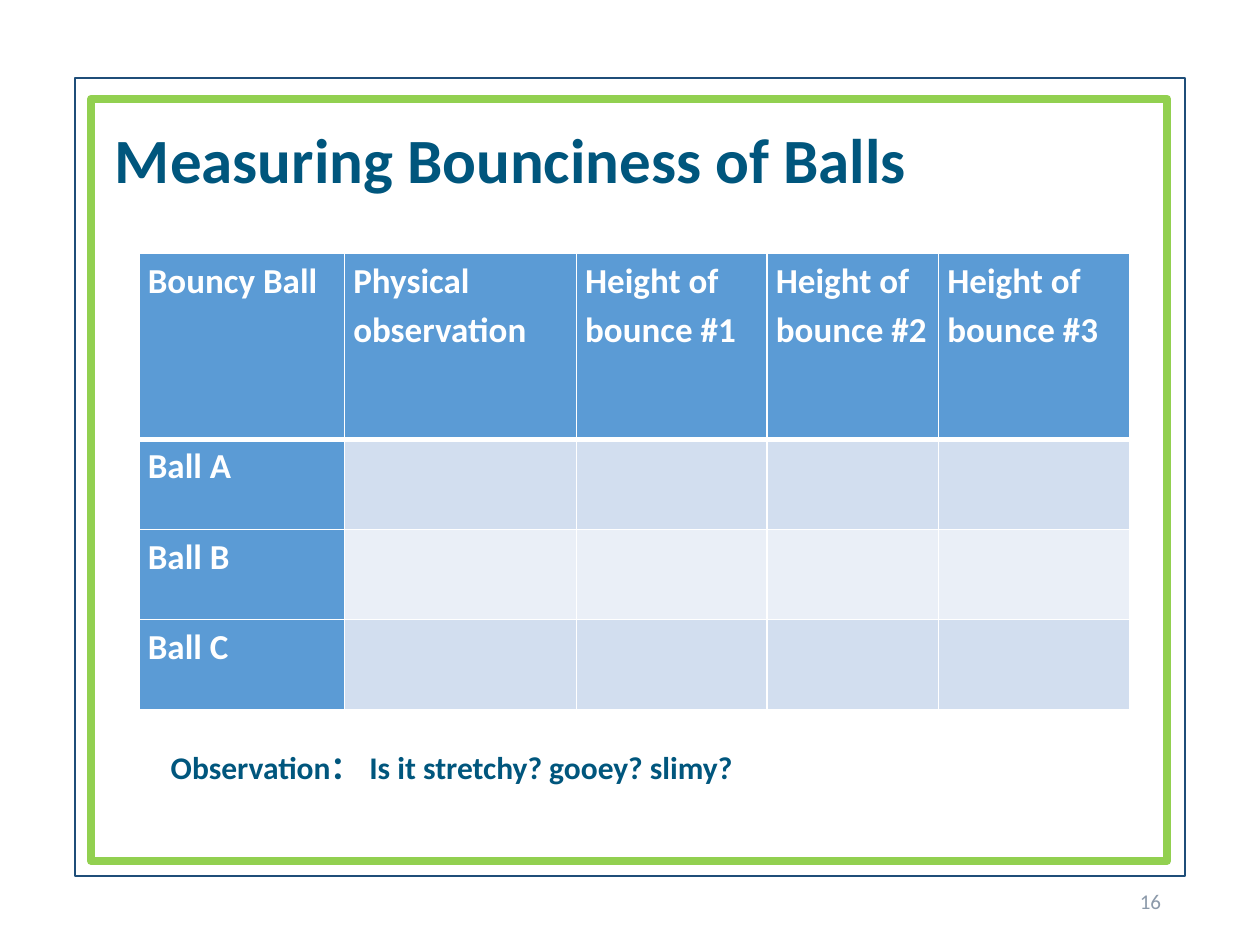
from lxml.etree import SubElement
from pptx import Presentation
from pptx.dml.color import RGBColor
from pptx.enum.shapes import MSO_SHAPE
from pptx.enum.text import MSO_ANCHOR, PP_ALIGN
from pptx.oxml.ns import qn
from pptx.util import Pt

COLORS = {
    "white": "FFFFFF",
    "navy": "1F4E79",
    "green": "92D050",
    "title": "00567D",
    "header": "5B9BD5",
    "odd band": "D2DEEF",
    "even band": "EAEFF7",
    "number": "8C9AAA",
}
HEADINGS = ["Bouncy Ball", "Physical observation"] + [
    f"Height of\nbounce #{number}" for number in (1, 2, 3)
]
BALLS = ["Ball A", "Ball B", "Ball C"]
COLUMN_WIDTHS = [117.4, 132.5, 109, 98, 109]
HEADER_HEIGHT, ROW_HEIGHT = 106, 51.5


def color(name):
    return RGBColor.from_string(COLORS[name])


class SlideBuilder:
    font_name = "Calibri"

    def __init__(self, slide):
        self.slide = slide

    def style(self, text_frame, size, color_name, bold=True, spacing=None, align=PP_ALIGN.LEFT):
        for paragraph in text_frame.paragraphs:
            paragraph.alignment = align
            paragraph.line_spacing = spacing
            paragraph.font.name = self.font_name
            paragraph.font.size = Pt(size)
            paragraph.font.bold = bold
            paragraph.font.color.rgb = color(color_name)

    def frame(self, left, top, width, height, line_color, line_width):
        shape = self.slide.shapes.add_shape(
            MSO_SHAPE.RECTANGLE, Pt(left), Pt(top), Pt(width), Pt(height))
        shape.shadow.inherit = False
        shape.fill.solid()
        shape.fill.fore_color.rgb = color("white")
        shape.line.color.rgb = color(line_color)
        shape.line.width = Pt(line_width)

    def title(self, text, left, top, width, height):
        shape = self.slide.shapes.title
        shape.left, shape.top, shape.width, shape.height = map(Pt, (left, top, width, height))
        shape.text_frame.text = text
        shape.text_frame.vertical_anchor = MSO_ANCHOR.MIDDLE
        self.style(shape.text_frame, 36, "title", spacing=0.9)
        # Bring the title in front of the frames
        shape.element.getparent().append(shape.element)

    def text(self, text, left, top, width, height, size, color_name,
             bold=True, align=PP_ALIGN.LEFT, anchor=MSO_ANCHOR.TOP):
        box = self.slide.shapes.add_textbox(Pt(left), Pt(top), Pt(width), Pt(height))
        box.text_frame.word_wrap = True
        box.text_frame.vertical_anchor = anchor
        box.text_frame.text = text
        self.style(box.text_frame, size, color_name, bold, align=align)

    def borders(self, cell, bottom_width, top_width):
        properties = cell._tc.get_or_add_tcPr()
        widths = {"a:lnL": 1, "a:lnR": 1, "a:lnT": top_width, "a:lnB": bottom_width}
        for position, (tag, width) in enumerate(widths.items()):
            line = SubElement(properties, qn(tag), w=str(Pt(width)))
            fill = SubElement(line, qn("a:solidFill"))
            SubElement(fill, qn("a:srgbClr"), val=COLORS["white"])
            properties.insert(position, line)

    def table(self, rows, left, top, column_widths, row_heights):
        table = self.slide.shapes.add_table(
            len(rows), len(column_widths), Pt(left), Pt(top),
            Pt(sum(column_widths)), Pt(sum(row_heights))).table
        for column, width in zip(table.columns, column_widths):
            column.width = Pt(width)
        for row_index, (row, height) in enumerate(zip(rows, row_heights)):
            table.rows[row_index].height = Pt(height)
            band = "odd band" if row_index % 2 else "even band"
            for column_index, text in enumerate(row):
                cell = table.cell(row_index, column_index)
                is_heading = row_index == 0 or column_index == 0
                cell.fill.solid()
                cell.fill.fore_color.rgb = color("header" if is_heading else band)
                self.borders(cell, 3 if row_index == 0 else 1, 3 if row_index == 1 else 1)
                cell.margin_left = cell.margin_right = Pt(5)
                cell.margin_top = cell.margin_bottom = 0
                cell.text = text
                self.style(cell.text_frame, 20, "white", spacing=1.15)


def main():
    presentation = Presentation()
    presentation.slide_width, presentation.slide_height = Pt(720), Pt(540)
    slide = presentation.slides.add_slide(presentation.slide_layouts[5])
    builder = SlideBuilder(slide)

    builder.frame(42.75, 44.75, 634.5, 456, "navy", 1)
    builder.frame(52, 56.5, 615, 435.5, "green", 4.5)
    builder.title("Measuring Bounciness of Balls", 58.5, 58.5, 603.5, 69.5)

    rows = [HEADINGS] + [[ball] + [""] * (len(HEADINGS) - 1) for ball in BALLS]
    row_heights = [HEADER_HEIGHT] + [ROW_HEIGHT] * len(BALLS)
    builder.table(rows, 79.5, 145, COLUMN_WIDTHS, row_heights)

    builder.text("16", 508.5, 500.5, 162, 28.75, 12, "number", bold=False,
                 align=PP_ALIGN.RIGHT, anchor=MSO_ANCHOR.MIDDLE)
    builder.text("Observation： Is it stretchy? gooey? slimy?",
                 90.5, 424, 360, 29, 18, "title")

    presentation.save("out.pptx")


if __name__ == "__main__":
    main()
